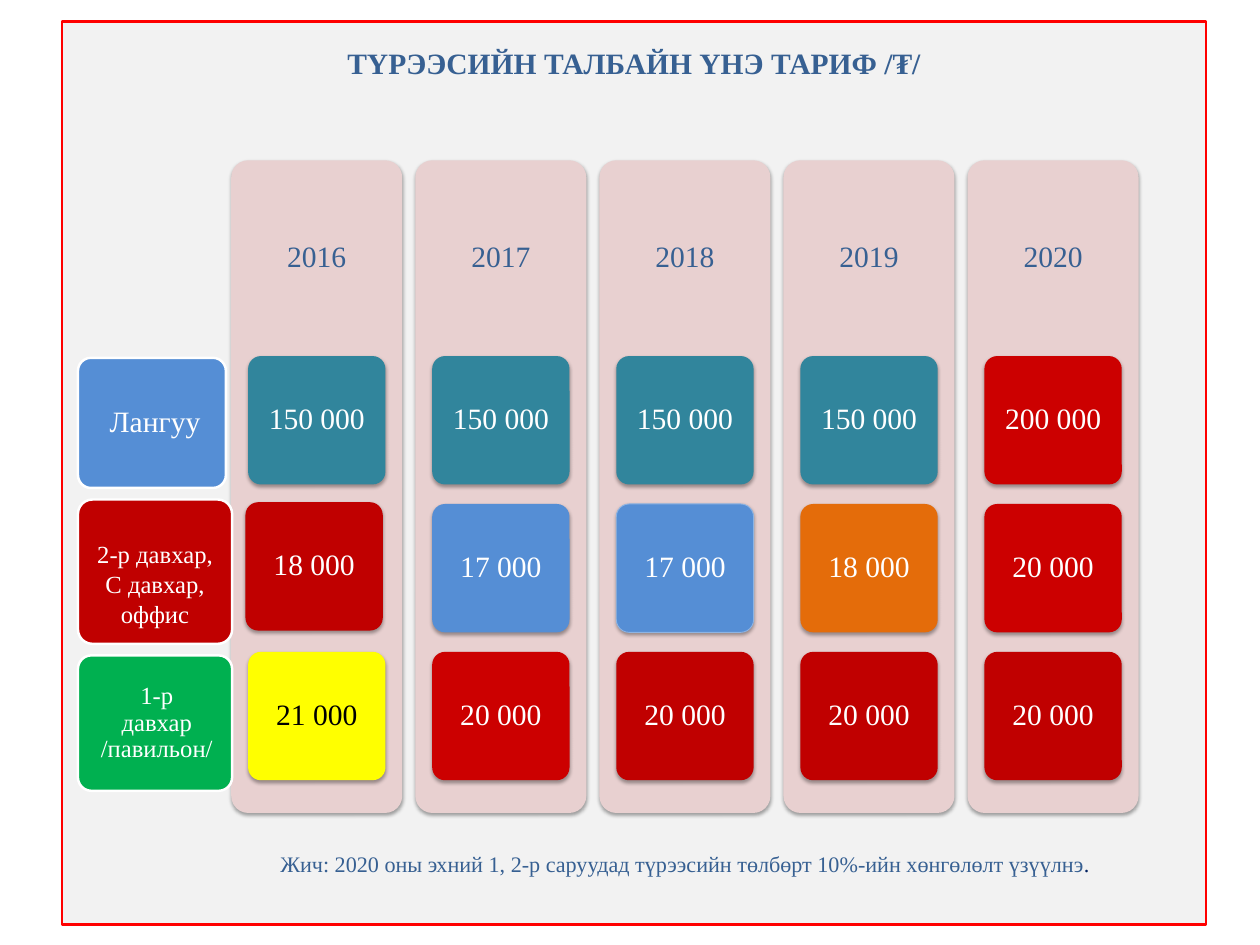
import lxml.etree
import pptx
import pptx.dml.color
import pptx.enum.shapes
import pptx.enum.text
import pptx.oxml
import pptx.oxml.ns
import pptx.util

Inches = pptx.util.Inches
Pt = pptx.util.Pt
RECT = pptx.enum.shapes.MSO_SHAPE.RECTANGLE
ROUNDED = pptx.enum.shapes.MSO_SHAPE.ROUNDED_RECTANGLE

TITLE = "ТҮРЭЭСИЙН ТАЛБАЙН ҮНЭ ТАРИФ /₮/"
NOTE = [("Жич: 2020 оны эхний 1, 2-р саруудад түрээсийн төлбөрт "
         "10%-ийн хөнгөлөлт үзүүлнэ", "376092"), (".", "002060")]

NAVY, WHITE, BLACK = "376092", "FFFFFF", "000000"
TEAL, BLUE, ORANGE, YELLOW = "31859C", "558ED5", "E46C0A", "FFFF00"
RED, DARK_RED, GREEN = "CC0000", "C00000", "00B050"

# year: (price, fill) for the counter, the second floor and the first floor
TARIFFS = {
    "2016": [("150 000", TEAL), ("18 000", DARK_RED), ("21 000", YELLOW)],
    "2017": [("150 000", TEAL), ("17 000", BLUE), ("20 000", RED)],
    "2018": [("150 000", TEAL), ("17 000", BLUE), ("20 000", DARK_RED)],
    "2019": [("150 000", TEAL), ("18 000", ORANGE), ("20 000", DARK_RED)],
    "2020": [("200 000", RED), ("20 000", RED), ("20 000", DARK_RED)],
}
# text, fill, size, line spacing, box, insets
CATEGORIES = [
    ("Лангуу", BLUE, 24, 0.9, (0.88, 4.04, 1.67, 1.47), (0.15, 0.06, 0.08, 0.06)),
    ("2-р давхар, С давхар, оффис", DARK_RED, 20, 1.0,
     (0.88, 5.64, 1.74, 1.63), (0.1, 0.32, 0.1, 0.05)),
    ("1-р давхар /павильон/", GREEN, 20, 0.9,
     (0.88, 7.4, 1.74, 1.53), (0.12, 0.06, 0.08, 0.06)),
]

FRAME = (0.7, 0.24, 12.91, 10.2)
COLUMN_LEFT, COLUMN_TOP, COLUMN_W, COLUMN_H = 2.61, 1.81, 1.93, 7.37
COLUMN_STEP = 8.31 / 4
YEAR_H = 2.21
CELL_TOP, CELL_W, CELL_H, CELL_STEP = 4.02, 1.55, 1.45, 1.67
CELL_SHIFTS = {("2016", 1): (-0.03, -0.02)}
CELL_LINES = {("2018", 1): ("8EB4E3", 0.75)}


def rgb(value):
    return pptx.dml.color.RGBColor.from_string(value)


def write(frame, runs, size, insets=(0.1, 0.05, 0.1, 0.05), spacing=1.0, bold=False):
    """Fill a text frame with one centred paragraph of (text, colour) runs."""
    frame.word_wrap = True
    frame.auto_size = pptx.enum.text.MSO_AUTO_SIZE.NONE
    frame.vertical_anchor = pptx.enum.text.MSO_ANCHOR.MIDDLE
    (frame.margin_left, frame.margin_top,
     frame.margin_right, frame.margin_bottom) = map(Inches, insets)
    paragraph = frame.paragraphs[0]
    paragraph.alignment = pptx.enum.text.PP_ALIGN.CENTER
    paragraph.line_spacing = spacing
    for text, color in runs:
        run = paragraph.add_run()
        run.text = text
        run.font.name = "Times New Roman"
        run.font.size = Pt(size)
        run.font.bold = bold
        run.font.color.rgb = rgb(color)


def add_box(kind, box, fill, line=None):
    shape = slide.shapes.add_shape(kind, *map(Inches, box))
    shape.shadow.inherit = False
    if kind == ROUNDED:
        shape.adjustments[0] = 0.1
    shape.fill.solid()
    shape.fill.fore_color.rgb = rgb(fill)
    if line:
        color, width = line
        shape.line.color.rgb = rgb(color)
        shape.line.width = Pt(width)
    else:
        shape.line.fill.background()
    return shape


def add_shadow(shape):
    effects = shape.element.spPr.find(pptx.oxml.ns.qn("a:effectLst"))
    effects.append(pptx.oxml.parse_xml(
        f'<a:outerShdw {pptx.oxml.ns.nsdecls("a")} blurRad="{Pt(3.1)}" '
        f'dist="{Pt(1.8)}" dir="5400000" rotWithShape="0">'
        '<a:srgbClr val="000000"><a:alpha val="35000"/></a:srgbClr></a:outerShdw>'))


deck = pptx.Presentation()
deck.slide_width, deck.slide_height = Inches(14.22), Inches(10.67)
slide = deck.slides.add_slide(deck.slide_layouts[5])

frame = add_box(RECT, FRAME, "F2F2F2", ("FF0000", 2.25))
title = slide.shapes.title
frame.element.addnext(title.element)
title.left, title.top, title.width, title.height = map(Inches, (0.7, 0.41, 12.91, 0.6))
write(title.text_frame, [(TITLE, NAVY)], 24, bold=True)

for index, (year, prices) in enumerate(TARIFFS.items()):
    left = COLUMN_LEFT + index * COLUMN_STEP
    column = add_box(ROUNDED, (left, COLUMN_TOP, COLUMN_W, COLUMN_H), "E8D0D0")
    add_shadow(column)
    write(column.text_frame, [(year, NAVY)], 24,
          (0.1, 0.1, 0.1, COLUMN_H - YEAR_H + 0.1), 0.9)
    for row, (price, fill) in enumerate(prices):
        dx, dy = CELL_SHIFTS.get((year, row), (0, 0))
        cell = add_box(ROUNDED, (left + (COLUMN_W - CELL_W) / 2 + dx,
                                 CELL_TOP + row * CELL_STEP + dy, CELL_W, CELL_H),
                       fill, CELL_LINES.get((year, row)))
        add_shadow(cell)
        write(cell.text_frame, [(price, BLACK if fill == YELLOW else WHITE)], 24,
              (0.07, 0.05, 0.07, 0.05), 0.9)

for text, fill, size, spacing, box, insets in CATEGORIES:
    category = add_box(ROUNDED, box, fill, (WHITE, 2))
    write(category.text_frame, [(text, WHITE)], size, insets, spacing)

note = slide.shapes.add_textbox(*map(Inches, (2.73, 9.5, 10, 0.5)))
write(note.text_frame, NOTE, 18)

deck.save("out.pptx")
